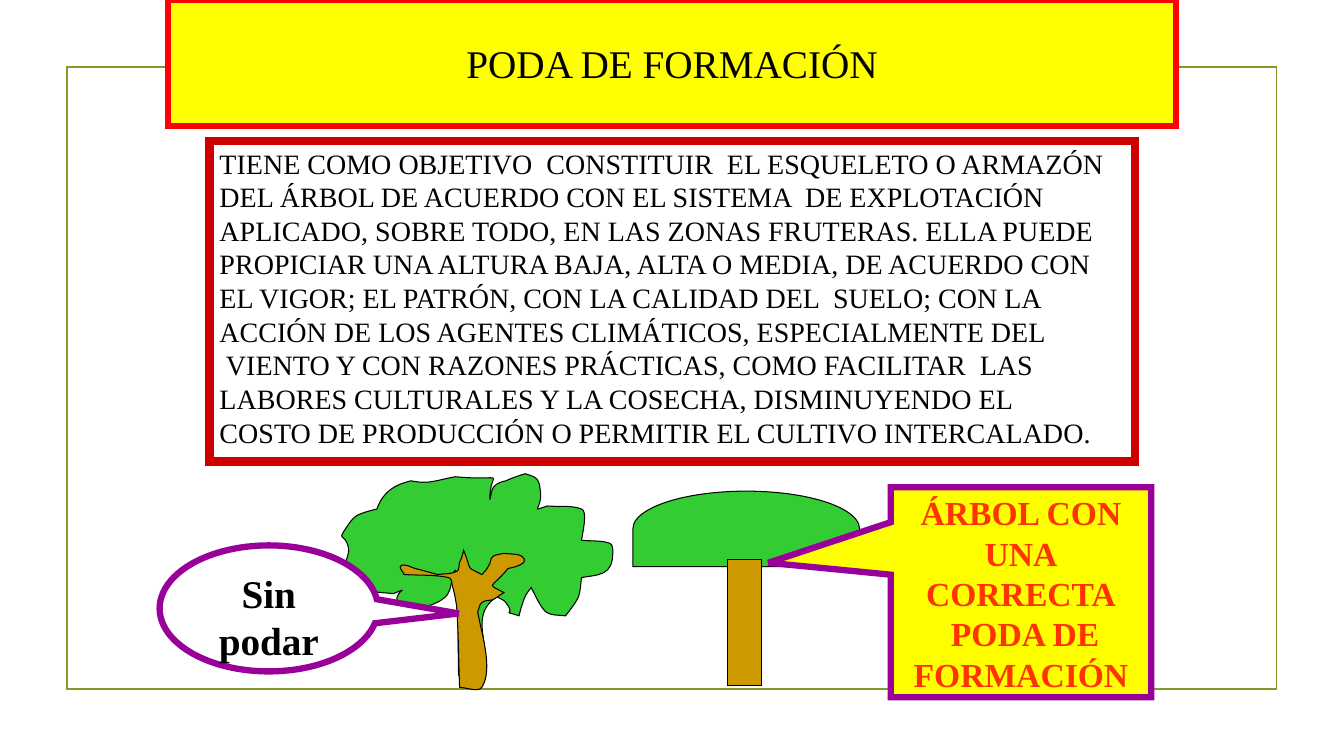
from lxml import etree
from pptx import Presentation
from pptx.dml.color import RGBColor
from pptx.enum.shapes import MSO_SHAPE
from pptx.enum.text import MSO_ANCHOR, MSO_AUTO_SIZE, PP_ALIGN
from pptx.oxml.ns import qn
from pptx.util import Pt

RECTANGLE = MSO_SHAPE.RECTANGLE
DOME = MSO_SHAPE.FLOWCHART_DELAY
TRUNK = MSO_SHAPE.FLOWCHART_PROCESS
BOX_CALLOUT = MSO_SHAPE.RECTANGULAR_CALLOUT
OVAL_CALLOUT = MSO_SHAPE.OVAL_CALLOUT
TOP, MIDDLE = MSO_ANCHOR.TOP, MSO_ANCHOR.MIDDLE
LEFT, CENTER = PP_ALIGN.LEFT, PP_ALIGN.CENTER

FONT = "Times New Roman"
COLORS = {
    "black": "000000", "white": "FFFFFF", "olive": "83992A", "yellow": "FFFF00",
    "red": "FF0000", "dark red": "CC0000", "leaf": "33CC33", "wood": "CC9900",
    "purple": "990099", "orange": "FF3300",
}
OUTLINE_UNIT = Pt(0.72)

OBJECTIVE = [
    "TIENE COMO OBJETIVO  CONSTITUIR  EL ESQUELETO O ARMAZÓN",
    "DEL ÁRBOL DE ACUERDO CON EL SISTEMA  DE EXPLOTACIÓN",
    "APLICADO, SOBRE TODO, EN LAS ZONAS FRUTERAS. ELLA PUEDE",
    "PROPICIAR UNA ALTURA BAJA, ALTA O MEDIA, DE ACUERDO CON",
    "EL VIGOR; EL PATRÓN, CON LA CALIDAD DEL  SUELO; CON LA",
    "ACCIÓN DE LOS AGENTES CLIMÁTICOS, ESPECIALMENTE DEL",
    " VIENTO Y CON RAZONES PRÁCTICAS, COMO FACILITAR  LAS",
    "LABORES CULTURALES Y LA COSECHA, DISMINUYENDO EL",
    "COSTO DE PRODUCCIÓN O PERMITIR EL CULTIVO INTERCALADO.",
]

# Each outline: start point, then cubic curves (control, control, end)
WILD_CROWN = (455, 670), [
    (454, 636, 456, 601, 452, 567), (451, 561, 448, 580, 446, 586),
    (442, 598, 422, 602, 411, 605), (406, 604, 399, 606, 396, 602),
    (386, 587, 412, 581, 390, 589), (373, 587, 366, 589, 355, 577),
    (350, 571, 343, 558, 343, 558), (344, 554, 346, 550, 346, 545),
    (343, 526, 332, 540, 346, 520), (348, 517, 351, 513, 355, 511),
    (361, 508, 374, 505, 374, 505), (380, 488, 391, 481, 408, 477),
    (426, 481, 434, 476, 452, 473), (506, 478, 486, 464, 486, 495),
    (486, 500, 487, 486, 490, 483), (493, 479, 498, 478, 502, 477),
    (508, 474, 521, 470, 521, 470), (530, 473, 535, 473, 536, 486),
    (539, 506, 524, 508, 543, 502), (554, 503, 566, 501, 577, 505),
    (580, 506, 580, 511, 580, 514), (580, 521, 578, 529, 577, 536),
    (586, 537, 597, 536, 605, 539), (608, 540, 608, 545, 608, 548),
    (608, 571, 595, 570, 577, 573), (576, 580, 576, 586, 574, 592),
    (571, 599, 561, 611, 561, 611), (555, 610, 548, 611, 543, 608),
    (537, 605, 530, 588, 527, 583), (525, 586, 522, 589, 521, 592),
    (518, 598, 515, 611, 515, 611), (494, 604, 514, 614, 502, 598),
    (500, 595, 496, 594, 493, 592), (462, 613, 492, 641, 477, 680),
    (474, 687, 462, 673, 455, 670),
]
WILD_TRUNK = (456, 682), [
    (455, 655, 455, 628, 453, 601), (452, 595, 451, 588, 449, 582),
    (448, 579, 449, 574, 445, 573), (431, 570, 416, 571, 401, 570),
    (400, 567, 395, 563, 398, 561), (402, 559, 408, 563, 412, 564),
    (420, 566, 434, 570, 434, 570), (440, 569, 447, 570, 453, 567),
    (456, 566, 455, 561, 456, 558), (458, 554, 459, 550, 460, 546),
    (469, 568, 461, 561, 478, 570), (481, 567, 483, 565, 485, 561),
    (487, 559, 486, 555, 489, 552), (492, 550, 496, 550, 500, 549),
    (506, 550, 514, 549, 518, 552), (528, 560, 504, 564, 504, 564),
    (487, 585, 482, 578, 500, 588), (496, 590, 493, 593, 489, 595),
    (486, 596, 481, 595, 478, 598), (475, 600, 476, 604, 474, 607),
    (477, 626, 490, 664, 478, 682), (474, 687, 463, 682, 456, 682),
]


def decorate(shape, fill, line, width):
    """Set fill and outline, with sharp corners and no shadow."""
    shape.shadow.inherit = False
    if fill:
        shape.fill.solid()
        shape.fill.fore_color.rgb = RGBColor.from_string(COLORS[fill])
    else:
        shape.fill.background()
    shape.line.color.rgb = RGBColor.from_string(COLORS[line])
    shape.line.width = Pt(width)
    stroke = shape._element.spPr.find(qn("a:ln"))
    etree.SubElement(stroke, qn("a:miter"), lim="800000")


def write(shape, lines, size, color="black", bold=False, align=CENTER, anchor=TOP):
    frame = shape.text_frame
    frame.word_wrap = True
    frame.auto_size = MSO_AUTO_SIZE.NONE
    frame.vertical_anchor = anchor
    for number, line in enumerate(lines):
        paragraph = frame.add_paragraph() if number else frame.paragraphs[0]
        paragraph.alignment = align
        run = paragraph.add_run()
        run.text = line
        run.font.name = FONT
        run.font.size = Pt(size)
        run.font.bold = bold
        run.font.color.rgb = RGBColor.from_string(COLORS[color])


prs = Presentation()
prs.slide_width, prs.slide_height = Pt(960), Pt(540)
slide = prs.slides.add_slide(prs.slide_layouts[5])
shapes = slide.shapes

border = shapes.add_shape(RECTANGLE, Pt(47.8), Pt(48), Pt(864), Pt(444))
decorate(border, None, "olive", 1.25)

# The title placeholder takes the outline of a burst, in front of the border
heading = shapes.title
heading.left, heading.top, heading.width, heading.height = Pt(120), Pt(0), Pt(720), Pt(90)
burst = etree.SubElement(heading._element.spPr, qn("a:prstGeom"), prst="irregularSeal1")
etree.SubElement(burst, qn("a:avLst"))
decorate(heading, "yellow", "red", 4.5)
write(heading, ["PODA DE FORMACIÓN"], 28, anchor=MIDDLE)
heading.text_frame.word_wrap = False
border._element.addnext(heading._element)

objective = shapes.add_shape(RECTANGLE, Pt(149.7), Pt(100.8), Pt(661), Pt(229))
decorate(objective, "white", "dark red", 6)
write(objective, OBJECTIVE, 20, align=LEFT)

# Unpruned tree: every three points of the outline become one cubic curve
for (start, curves), fill in ((WILD_CROWN, "leaf"), (WILD_TRUNK, "wood")):
    builder = shapes.build_freeform(*(c * OUTLINE_UNIT for c in start))
    builder.add_line_segments([
        (curve[i] * OUTLINE_UNIT, curve[i + 1] * OUTLINE_UNIT)
        for curve in curves for i in (0, 2, 4)
    ], close=True)
    tree_part = builder.convert_to_shape()
    segments = list(tree_part._element.iter(qn("a:lnTo")))
    for first in range(0, len(curves) * 3, 3):
        cubic = etree.Element(qn("a:cubicBezTo"))
        segments[first].addprevious(cubic)
        for segment in segments[first:first + 3]:
            cubic.append(segment[0])
            segment.getparent().remove(segment)
    decorate(tree_part, fill, "black", 0.75)

# Pruned tree
pruned_crown = shapes.add_shape(DOME, Pt(506), Pt(296.8), Pt(54), Pt(162))
pruned_crown.rotation = 270
decorate(pruned_crown, "leaf", "black", 0.75)
pruned_trunk = shapes.add_shape(TRUNK, Pt(519.6), Pt(399.6), Pt(24), Pt(90))
decorate(pruned_trunk, "wood", "black", 0.75)

# Callouts
callouts = [
    (BOX_CALLOUT, (636.3, 348, 186, 150), (-0.97, -0.14), "yellow",
     ["ÁRBOL CON UNA", "CORRECTA", " PODA DE FORMACIÓN"], 24, "orange"),
    (OVAL_CALLOUT, (114, 389.6, 156, 90), (0.87, 0.04), "white",
     ["Sin", "podar"], 28, "black"),
]
for preset, place, tip, fill, lines, size, color in callouts:
    callout = shapes.add_shape(preset, *(Pt(length) for length in place))
    callout.adjustments[0], callout.adjustments[1] = tip
    decorate(callout, fill, "purple", 4.5)
    write(callout, lines, size, color, bold=True)

prs.save("out.pptx")
